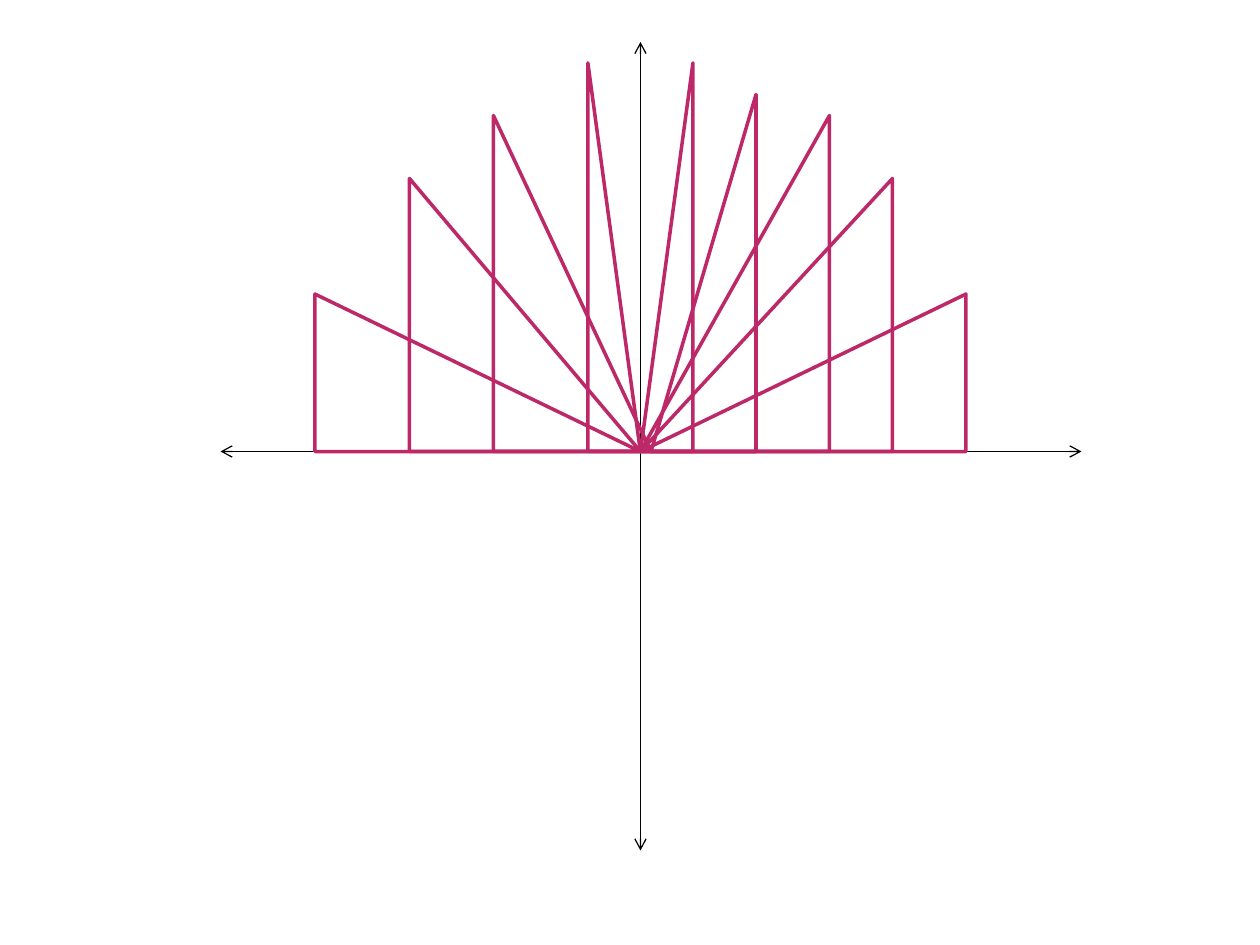
from dataclasses import dataclass

from lxml import etree
from pptx import Presentation
from pptx import util as u
from pptx.dml.color import RGBColor
from pptx.enum import shapes
from pptx.oxml.ns import qn


@dataclass(frozen=True)
class Theme:
    axis: str = "000000"
    triangle: str = "BD2968"
    axis_width: float = 0.75
    triangle_width: float = 2


THEME = Theme()
SLIDE = (960, 720)
ORIGIN = (488, 344)
AXES = [  # x1, y1, x2, y2
    (488, 32, 488, 648),
    (168, 344, 824, 344),
]
TRIANGLES = [  # near x, far x (both from the origin), height
    (0, 248, 120),
    (0, 192, 208),
    (0, 144, 256),
    (0, 40, 296),
    (8, 88, 272),
    (0, -40, 296),
    (0, -248, 120),
    (0, -176, 208),
    (8, -112, 256),
]


def px(n):
    return u.Emu(n * 9525)


def style_line(line, color, width):
    line.color.rgb = RGBColor.from_string(color)
    line.width = u.Pt(width)


def add_axis(slide, ends):
    axis = slide.shapes.add_connector(
        shapes.MSO_CONNECTOR.STRAIGHT, *map(px, ends))
    style_line(axis.line, THEME.axis, THEME.axis_width)
    ln = axis.line._get_or_add_ln()
    for tag in ("a:headEnd", "a:tailEnd"):
        etree.SubElement(ln, qn(tag)).set("type", "arrow")
    etree.SubElement(axis._element.spPr, qn("a:effectLst"))


def add_triangle(slide, near, far, height):
    """Stand a right triangle on the x axis, its right angle at the far end."""
    x0, y0 = ORIGIN
    sp = slide.shapes.add_shape(
        shapes.MSO_SHAPE.ISOSCELES_TRIANGLE,
        px(x0 + min(near, far)), px(y0 - height),
        px(abs(far - near)), px(height))
    sp.adjustments[0] = 1
    if far < near:
        sp._element.spPr.xfrm.set("flipH", "1")
    sp.shadow.inherit = False
    sp.fill.background()
    style_line(sp.line, THEME.triangle, THEME.triangle_width)


def main():
    prs = Presentation()
    prs.slide_width, prs.slide_height = map(px, SLIDE)
    slide = prs.slides.add_slide(prs.slide_layouts[6])
    for ends in AXES:
        add_axis(slide, ends)
    for triangle in TRIANGLES:
        add_triangle(slide, *triangle)
    prs.save("out.pptx")


if __name__ == "__main__":
    main()
